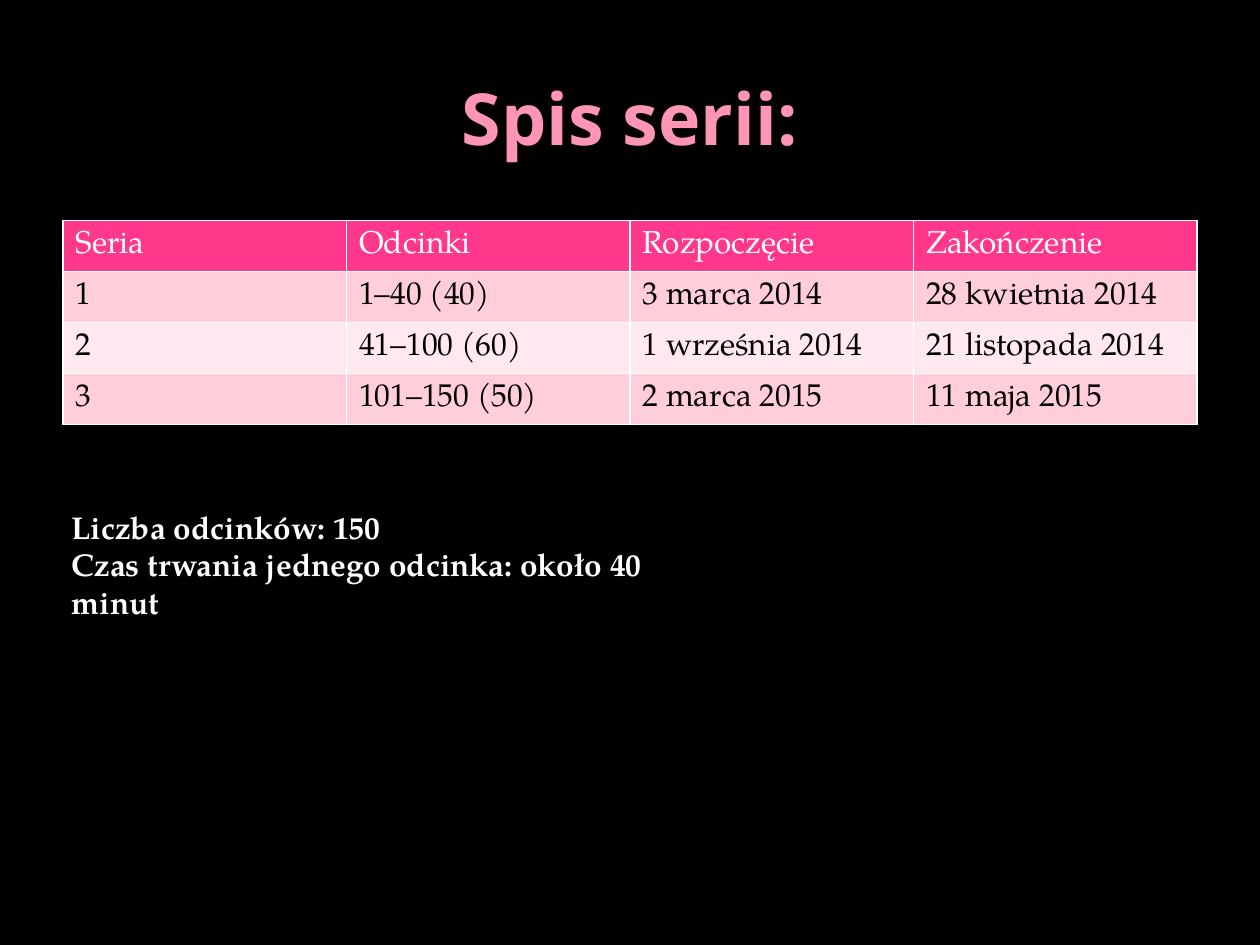
from lxml.etree import SubElement
from pptx import Presentation
from pptx.dml.color import RGBColor
from pptx.enum.text import MSO_ANCHOR, MSO_AUTO_SIZE, PP_ALIGN
from pptx.oxml.ns import qn
from pptx.util import Inches, Pt

COLORS = {
    "background": "000000",
    "title": "FF95B5",
    "header": "FF388C",
    "odd_row": "FFCEDA",
    "even_row": "FFE8EE",
    "light": "FFFFFF",
    "dark": "000000",
}
TITLE_FONT = "Open Sans"
BODY_FONT = "TeX Gyre Pagella"
SERIES = [
    ("Seria", "Odcinki", "Rozpoczęcie", "Zakończenie"),
    ("1", "1–40 (40)", "3 marca 2014", "28 kwietnia 2014"),
    ("2", "41–100 (60)", "1 września 2014", "21 listopada 2014"),
    ("3", "101–150 (50)", "2 marca 2015", "11 maja 2015"),
]
SUMMARY = ["Liczba odcinków: 150", "Czas trwania jednego odcinka: około 40 minut"]


def color(name):
    """Return the named palette color."""
    return RGBColor.from_string(COLORS[name])


def format_text(paragraph, family, size, color_name, bold=False):
    """Set the font of a whole paragraph."""
    font = paragraph.font
    font.name, font.size, font.bold = family, Pt(size), bold
    font.color.rgb = color(color_name)


def add_borders(cell, sides):
    """Draw thin light borders on the given sides of a cell."""
    properties = cell._tc.get_or_add_tcPr()
    for side in sides:
        line = SubElement(properties, qn(f"a:ln{side}"), w=str(Pt(1)))
        fill = SubElement(line, qn("a:solidFill"))
        SubElement(fill, qn("a:srgbClr"), val=COLORS["light"])


def add_title(slide, left, top, width, height):
    """Place the slide heading in its placeholder."""
    title = slide.shapes.title
    title.left, title.top, title.width, title.height = left, top, width, height
    title.text_frame.text = "Spis serii:"
    title.text_frame.vertical_anchor = MSO_ANCHOR.MIDDLE
    heading = title.text_frame.paragraphs[0]
    heading.alignment = PP_ALIGN.CENTER
    format_text(heading, TITLE_FONT, 41, "title", bold=True)


def add_series_table(slide, left, top, width, height):
    """Place the table of series with alternating row colors."""
    table = slide.shapes.add_table(
        len(SERIES), len(SERIES[0]), left, top, width, height
    ).table
    for row_index, values in enumerate(SERIES):
        is_header = row_index == 0
        band = "header" if is_header else "odd_row" if row_index % 2 else "even_row"
        sides = "LRT" if is_header else "LRB" if row_index == 1 else "LRTB"
        for column_index, value in enumerate(values):
            cell = table.cell(row_index, column_index)
            cell.text = value
            cell.vertical_anchor = MSO_ANCHOR.MIDDLE
            add_borders(cell, sides)
            cell.fill.solid()
            cell.fill.fore_color.rgb = color(band)
            format_text(cell.text_frame.paragraphs[0], BODY_FONT, 18,
                        "light" if is_header else "dark")


def add_summary(slide, left, top, width, height):
    """Place the episode count and duration below the table."""
    frame = slide.shapes.add_textbox(left, top, width, height).text_frame
    frame.word_wrap = True
    frame.auto_size = MSO_AUTO_SIZE.SHAPE_TO_FIT_TEXT
    frame.text = "\n".join(SUMMARY)
    for paragraph in frame.paragraphs:
        format_text(paragraph, BODY_FONT, 18, "light", bold=True)


def main():
    """Build and save the presentation."""
    presentation = Presentation()
    presentation.slide_width, presentation.slide_height = Inches(10), Inches(7.5)
    slide = presentation.slides.add_slide(presentation.slide_layouts[5])
    slide.background.fill.solid()
    slide.background.fill.fore_color.rgb = color("background")
    add_title(slide, Inches(0.5), Inches(0.3), Inches(9), Inches(1.25))
    add_series_table(slide, Inches(0.5), Inches(1.75), Inches(9), Inches(1.62))
    add_summary(slide, Inches(0.47), Inches(3.98), Inches(5), Inches(0.71))
    presentation.save("out.pptx")


if __name__ == "__main__":
    main()
